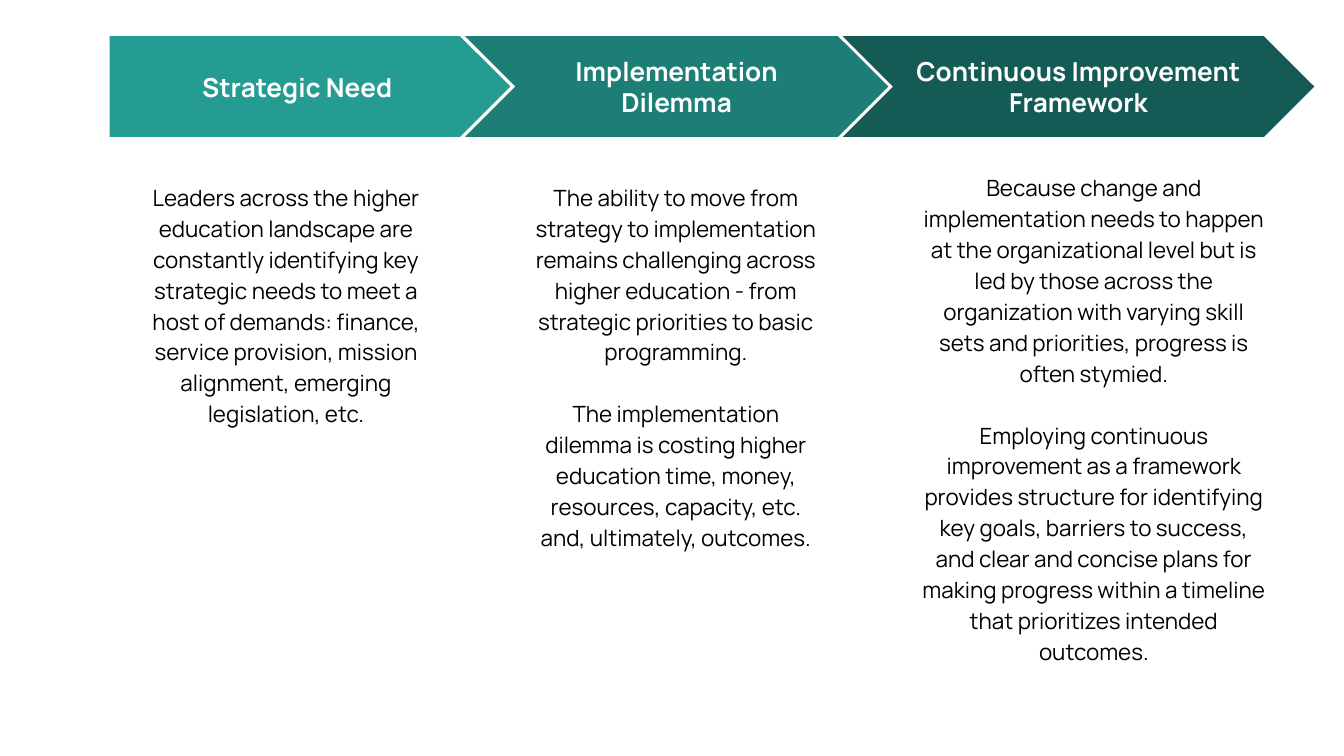
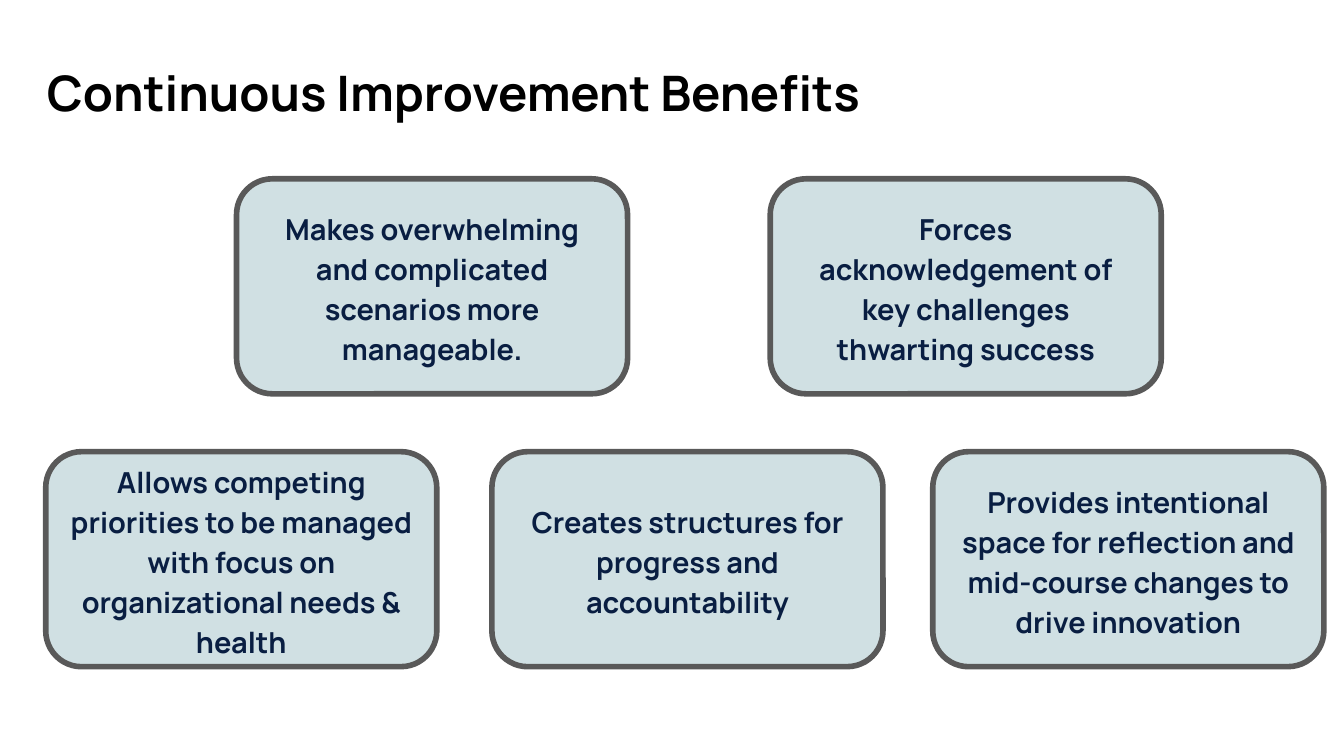
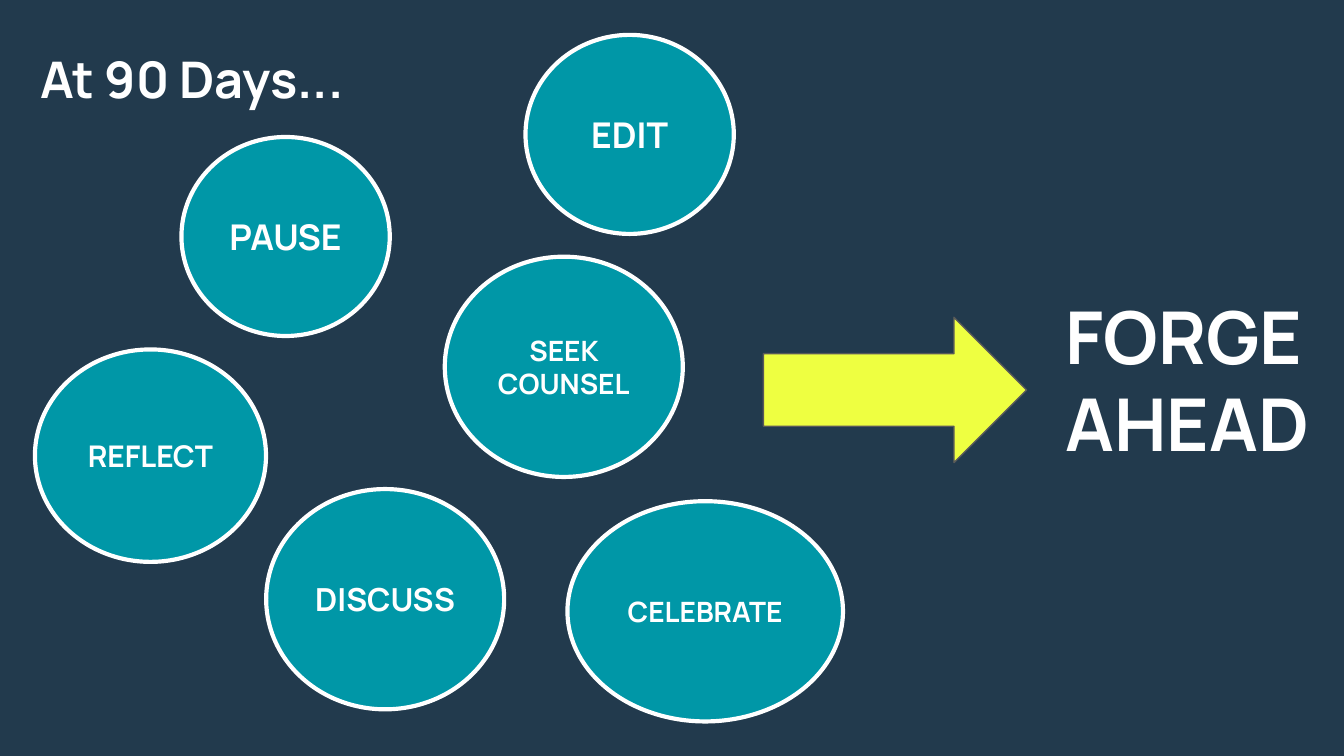
"""Build three slides on continuous improvement."""
from typing import Any, NamedTuple, Optional

import pptx
import pptx.dml.color
import pptx.enum.shapes
import pptx.enum.text
import pptx.util

Pt = pptx.util.Pt
RGBColor = pptx.dml.color.RGBColor
KIND = pptx.enum.shapes.MSO_SHAPE
ALIGN = pptx.enum.text.PP_ALIGN
ANCHOR = pptx.enum.text.MSO_ANCHOR

FONT = "Manrope"
WHITE = RGBColor(0xFF, 0xFF, 0xFF)
BLACK = RGBColor(0x00, 0x00, 0x00)
NAVY = RGBColor(0x09, 0x1E, 0x42)
SLATE = RGBColor(0x22, 0x3A, 0x4D)
GREY = RGBColor(0x59, 0x59, 0x59)
PALE = RGBColor(0xD0, 0xE0, 0xE3)
MINT = RGBColor(0x24, 0x9C, 0x91)
TEAL = RGBColor(0x1D, 0x7E, 0x75)
PINE = RGBColor(0x15, 0x5B, 0x55)
CYAN = RGBColor(0x00, 0x97, 0xA7)
LIME = RGBColor(0xEE, 0xFF, 0x41)

INSET = 7.2
SPACING = 1.15
GAP = 16.5
BAND_TOP, BAND_HIGH = 19.4, 54
BODY_HIGH = 210
CARD_WIDE, CARD_HIGH = 209.5, 115.2


class Box(NamedTuple):
    """Place and size in points."""
    left: float
    top: float
    wide: float
    high: float


class Style(NamedTuple):
    """Look of a text."""
    size: float
    color: RGBColor
    bold: bool = True
    align: Any = ALIGN.CENTER
    spacing: Optional[float] = None


class Stage(NamedTuple):
    """Arrow band with the text below it."""
    kind: Any
    left: float
    wide: float
    fill: RGBColor
    head: str
    body: Box
    texts: tuple[str, ...]


class Card(NamedTuple):
    """Benefit in a rounded box."""
    left: float
    top: float
    text: str


class Step(NamedTuple):
    """Circle naming one action."""
    box: Box
    size: float
    text: str


STAGES = (
    Stage(KIND.PENTAGON, 58.8, 214.6, MINT, "Strategic Need",
          Box(62.6, 89.3, 181.4, BODY_HIGH),
          ("Leaders across the higher education landscape are constantly "
           "identifying key strategic needs to meet a host of demands: finance, "
           "service provision, mission alignment, emerging legislation, etc.",)),
    Stage(KIND.CHEVRON, 249.1, 226.8, TEAL, "Implementation Dilemma",
          Box(277.2, 89.3, 169.9, BODY_HIGH),
          ("The ability to move from strategy to implementation remains "
           "challenging across higher education - from strategic priorities to "
           "basic programming.",
           "The implementation dilemma is costing higher education time, money, "
           "resources, capacity, etc. and, ultimately, outcomes.")),
    Stage(KIND.CHEVRON, 451.4, 252.7, PINE, "Continuous Improvement Framework",
          Box(486.7, 84.2, 198.7, BODY_HIGH),
          ("Because change and implementation needs to happen at the "
           "organizational level but is led by those across the organization "
           "with varying skill sets and priorities, progress is often stymied.",
           "Employing continuous improvement as a framework provides structure "
           "for identifying key goals, barriers to success, and clear and "
           "concise plans for making progress within a timeline that "
           "prioritizes intended outcomes.")),
)

UPPER, LOWER = 95.8, 242
CARDS = (
    Card(126.7, UPPER, "Makes overwhelming and complicated scenarios more manageable."),
    Card(24.5, LOWER, "Allows competing priorities to be managed with focus on "
                      "organizational needs & health"),
    Card(263.5, LOWER, "Creates structures for progress and accountability"),
    Card(412.6, UPPER, "Forces acknowledgement of key challenges thwarting success"),
    Card(499.7, LOWER, "Provides intentional space for reflection and mid-course "
                       "changes to drive innovation"),
)

STEPS = (
    Step(Box(97.2, 73.4, 111.6, 106.6), 19, "PAUSE"),
    Step(Box(18.7, 187.2, 123.8, 113.8), 16, "REFLECT"),
    Step(Box(142.6, 262, 127.5, 118), 17, "DISCUSS"),
    Step(Box(281.5, 18.7, 111.6, 106.6), 19, "EDIT"),
    Step(Box(238.3, 137.5, 127.5, 118), 15, "SEEK COUNSEL"),
    Step(Box(304, 268.5, 147.6, 118), 15, "CELEBRATE"),
)


def place(box: Box) -> tuple:
    """Return the box as lengths."""
    return tuple(Pt(side) for side in box)


def write(frame: Any, texts: tuple[str, ...], style: Style) -> None:
    """Fill a text frame with one paragraph per text."""
    frame.word_wrap = True
    frame.margin_left = frame.margin_right = Pt(INSET)
    frame.margin_top = frame.margin_bottom = Pt(INSET)
    for rank, text in enumerate(texts):
        para = frame.add_paragraph() if rank else frame.paragraphs[0]
        para.alignment = style.align
        if style.spacing:
            para.line_spacing = style.spacing
        if rank:
            para.space_before = Pt(GAP)
        run = para.add_run()
        run.text = text
        run.font.name = FONT
        run.font.size = Pt(style.size)
        run.font.bold = style.bold
        run.font.color.rgb = style.color


def label(shapes: Any, box: Box, style: Style, *texts: str) -> None:
    """Add a plain text box."""
    write(shapes.add_textbox(*place(box)).text_frame, texts, style)


def draw(shapes: Any, kind: Any, box: Box, fill: RGBColor,
         line: Optional[RGBColor] = None, weight: float = 0) -> Any:
    """Add a filled shape, outlined if a line colour is given."""
    shape = shapes.add_shape(kind, *place(box))
    shape.shadow.inherit = False
    shape.fill.solid()
    shape.fill.fore_color.rgb = fill
    if line is None:
        shape.line.fill.background()
    else:
        shape.line.color.rgb = line
        shape.line.width = Pt(weight)
    return shape


def fill_in(shape: Any, text: str, style: Style) -> None:
    """Write text in the middle of a shape."""
    shape.text_frame.vertical_anchor = ANCHOR.MIDDLE
    write(shape.text_frame, (text,), style)


def start(deck: Any, color: RGBColor) -> Any:
    """Add a blank slide and return its shapes."""
    slide = deck.slides.add_slide(deck.slide_layouts[6])
    slide.background.fill.solid()
    slide.background.fill.fore_color.rgb = color
    return slide.shapes


def show_stages(deck: Any) -> None:
    """Build the slide from need to framework."""
    shapes = start(deck, WHITE)
    for stage in STAGES:
        group = shapes.add_group_shape().shapes
        box = Box(stage.left, BAND_TOP, stage.wide, BAND_HIGH)
        band = draw(group, stage.kind, box, stage.fill)
        fill_in(band, stage.head, Style(14, WHITE))
        label(group, stage.body, Style(12, BLACK, False, spacing=SPACING), *stage.texts)


def show_cards(deck: Any) -> None:
    """Build the slide of benefits."""
    shapes = start(deck, WHITE)
    label(shapes, Box(18, 26.6, 671, 45.4), Style(26.2, BLACK, align=ALIGN.LEFT),
          "Continuous Improvement Benefits")
    for card in CARDS:
        box = Box(card.left, card.top, CARD_WIDE, CARD_HIGH)
        shape = draw(shapes, KIND.ROUNDED_RECTANGLE, box, PALE, GREY, 3)
        fill_in(shape, card.text, Style(15.5, NAVY, spacing=SPACING))


def show_steps(deck: Any) -> None:
    """Build the slide of steps at 90 days."""
    shapes = start(deck, SLATE)
    label(shapes, Box(14.4, 18.7, 287.3, 48.2), Style(27, WHITE, align=ALIGN.LEFT),
          "At 90 Days...")
    for step in STEPS:
        shape = draw(shapes, KIND.FLOWCHART_CONNECTOR, step.box, CYAN, WHITE, 2.25)
        fill_in(shape, step.text, Style(step.size, WHITE))
    draw(shapes, KIND.RIGHT_ARROW, Box(409, 170, 141, 77.8), LIME, GREY, 0.75)
    label(shapes, Box(563.8, 149, 147.6, 204.5), Style(39, WHITE, align=ALIGN.LEFT),
          "FORGE AHEAD")


def main() -> None:
    """Build and save the deck."""
    deck = pptx.Presentation()
    deck.slide_width, deck.slide_height = Pt(720), Pt(405)
    show_stages(deck)
    show_cards(deck)
    show_steps(deck)
    deck.save("out.pptx")


if __name__ == "__main__":
    main()
